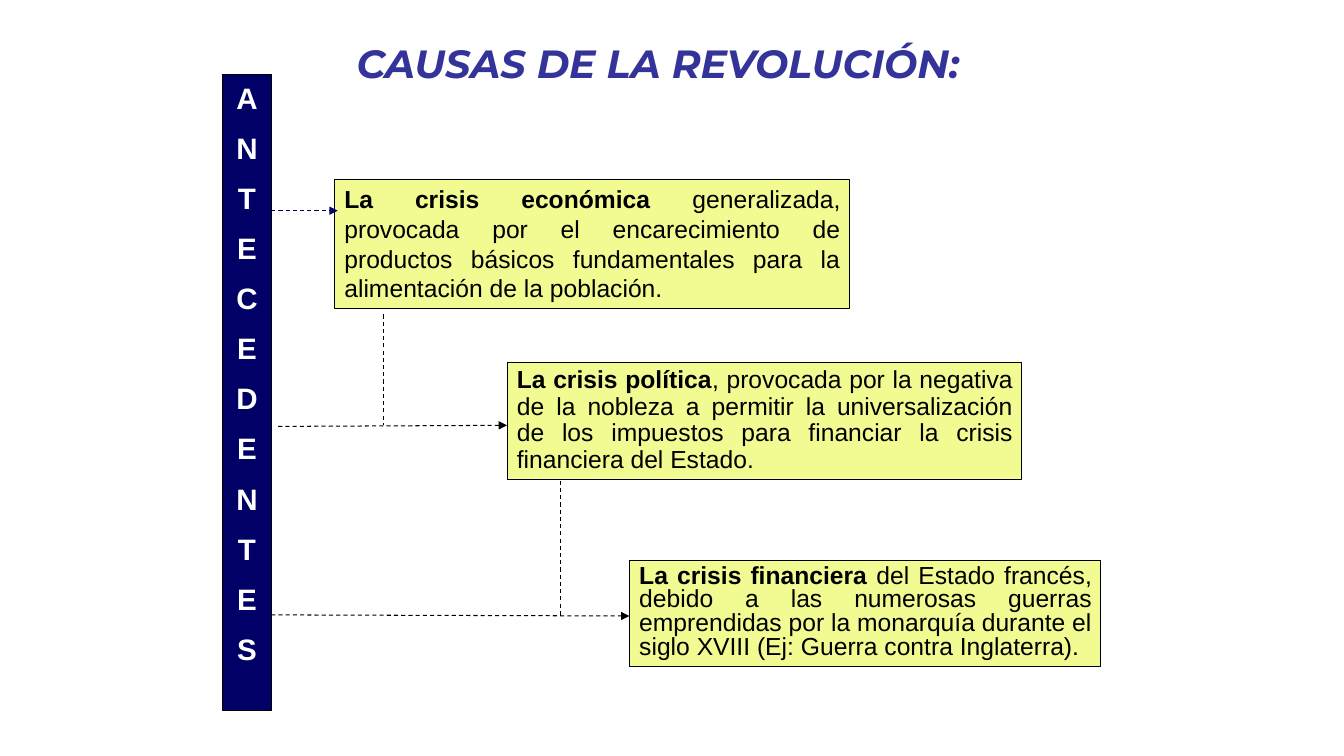
from collections import namedtuple

from lxml import etree
from pptx import Presentation
from pptx.dml.color import RGBColor
from pptx.enum import dml, shapes, text
from pptx.oxml.ns import qn
from pptx.util import Pt

Theme = namedtuple("Theme", "title navy white black lime head body letter sans show")
THEME = Theme("333399", "000066", "FFFFFF", "000000", "EAF959",
              28.1, 17.6, 21.1, "Arial", "Montserrat")

CAUSES = [
    ((239, 128, 367.6, 92.2), 21.15, "La crisis económica",
     " generalizada, provocada por el encarecimiento de productos básicos "
     "fundamentales para la alimentación de la población."),
    ((362.2, 258.5, 367.6, 83.5), 19.05, "La crisis política",
     ", provocada por la negativa de la nobleza a permitir la universalización "
     "de los impuestos para financiar la crisis financiera del Estado."),
    ((449.6, 400.3, 336.6, 75.3), 16.9, "La crisis financiera",
     " del Estado francés, debido a las numerosas guerras emprendidas por la "
     "monarquía durante el siglo XVIII (Ej: Guerra contra Inglaterra)."),
]

LINKS = [
    ((274.2, 224.6, 274.2, 303.8), THEME.black, False),
    ((198.7, 304.6, 362.2, 303.8), THEME.black, True),
    ((400.3, 343.4, 400.3, 441.4), THEME.black, False),
    ((193.7, 439.2, 449.6, 440), THEME.black, True),
    ((193.7, 150.5, 241.2, 150.5), THEME.navy, True),
]


def style(para, face, size, color, align):
    para.alignment = align
    para.font.name = face
    para.font.size = Pt(size)
    para.font.color.rgb = RGBColor.from_string(color)


def add_title(slide, words):
    box = slide.shapes.add_textbox(Pt(198.7), Pt(20.9), Pt(542.9), Pt(48.2))
    frame = box.text_frame
    frame.word_wrap = True
    frame.vertical_anchor = text.MSO_ANCHOR.MIDDLE
    para = frame.paragraphs[0]
    para.text = words
    style(para, THEME.show, THEME.head, THEME.title, text.PP_ALIGN.CENTER)
    para.font.bold = para.font.italic = True


def add_panel(slide, place, fill, width):
    panel = slide.shapes.add_shape(shapes.MSO_SHAPE.RECTANGLE, *map(Pt, place))
    panel.shadow.inherit = False
    panel.fill.solid()
    panel.fill.fore_color.rgb = RGBColor.from_string(fill)
    panel.line.color.rgb = RGBColor.from_string(THEME.black)
    panel.line.width = Pt(width)
    panel.text_frame.word_wrap = True
    panel.text_frame.vertical_anchor = text.MSO_ANCHOR.TOP
    return panel


def add_cause(slide, place, pitch, lead, rest):
    panel = add_panel(slide, place, THEME.lime, 0.25)
    color = next(panel.fill._xPr.iter(qn("a:srgbClr")))
    etree.SubElement(color, qn("a:alpha"), val="65000")
    frame = panel.text_frame
    frame.margin_left, frame.margin_right = Pt(7), Pt(6)
    para = frame.paragraphs[0]
    style(para, THEME.sans, THEME.body, THEME.black, text.PP_ALIGN.JUSTIFY)
    para.line_spacing = Pt(pitch)
    for words, bold in ((lead, True), (rest, False)):
        run = para.add_run()
        run.text = words
        run.font.bold = bold


def add_column(slide, word):
    panel = add_panel(slide, (159.1, 53.3, 34.6, 454.3), THEME.navy, 0.75)
    frame = panel.text_frame
    for index, letter in enumerate(word):
        para = frame.add_paragraph() if index else frame.paragraphs[0]
        para.text = letter
        style(para, THEME.sans, THEME.letter, THEME.white, text.PP_ALIGN.CENTER)
        para.font.bold = True
        para.line_spacing = Pt(25.3)
        if index:
            para.space_before = Pt(10.5)


def add_link(slide, ends, color, arrow):
    link = slide.shapes.add_connector(shapes.MSO_CONNECTOR.STRAIGHT, *map(Pt, ends))
    link.line.color.rgb = RGBColor.from_string(color)
    link.line.width = Pt(0.75)
    link.line.dash_style = dml.MSO_LINE.DASH
    props = link._element.spPr
    if arrow:
        etree.SubElement(props.find(qn("a:ln")), qn("a:tailEnd"), type="triangle")
    etree.SubElement(props, qn("a:effectLst"))


def main():
    deck = Presentation()
    deck.slide_width, deck.slide_height = Pt(960), Pt(540)
    slide = deck.slides.add_slide(deck.slide_layouts[6])
    add_title(slide, "CAUSAS DE LA REVOLUCIÓN:")
    for cause in CAUSES:
        add_cause(slide, *cause)
    add_column(slide, "ANTECEDENTES")
    for link in LINKS:
        add_link(slide, *link)
    deck.save("out.pptx")


if __name__ == "__main__":
    main()
